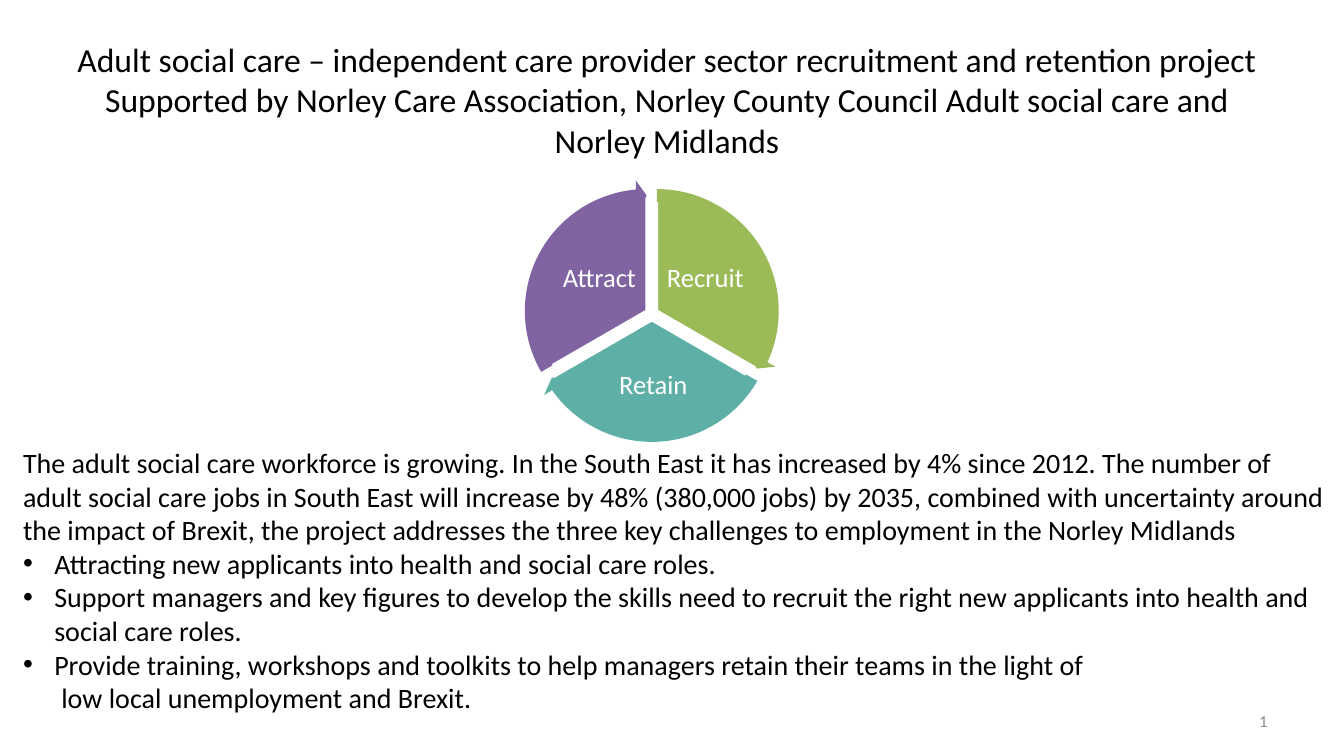
from dataclasses import dataclass

from lxml import etree
from pptx import Presentation
from pptx.dml.color import RGBColor
from pptx.enum.shapes import MSO_SHAPE as Shape
from pptx.enum.text import MSO_ANCHOR as Anchor, PP_ALIGN as Align
from pptx.oxml.ns import qn
from pptx.util import Inches, Pt


@dataclass(frozen=True)
class Theme:
    font: str = "Calibri"
    text: str = "000000"
    white: str = "FFFFFF"
    muted: str = "8C8C8C"
    green: str = "9BBB59"
    teal: str = "5EAFA6"
    purple: str = "8064A2"
    title: int = 24
    body: int = 20
    label: int = 19
    number: int = 12


THEME = Theme()

TITLE = [
    "Adult social care – independent care provider sector recruitment and retention project",
    "Supported by Norley Care Association, Norley County Council Adult social care and Norley Midlands",
]
INTRO = (
    "The adult social care workforce is growing. In the South East it has increased by 4% since 2012. "
    "The number of adult social care jobs in South East will increase by 48% (380,000 jobs) by 2035, "
    "combined with uncertainty around the impact of Brexit, the project addresses the three key "
    "challenges to employment in the Norley Midlands"
)
CHALLENGES = [
    "Attracting new applicants into health and social care roles.",
    "Support managers and key figures to develop the skills need to recruit the right new applicants "
    "into health and social care roles.",
    "Provide training, workshops and toolkits to help managers retain their teams in the light of",
]
CLOSING = "low local unemployment and Brexit."
PAGE_NUMBER = "1"

STAGES = [
    ("Recruit", THEME.green, (5.36, 1.93), (162, 18), (14.73, 161.99), (6.58, 2.42, 0.83, 0.69)),
    ("Retain", THEME.teal, (5.31, 2.02), (18, 90), (86.72, 18), (5.86, 3.52, 1.24, 0.61)),
    ("Attract", THEME.purple, (5.26, 1.93), (90, 162), (158.73, 90), (5.53, 2.42, 0.83, 0.69)),
]
PIE_SIZE = 2.31
ARROW_SIZE = 2.6
ARROW_BAND, ARROW_HEAD, ARROW_EDGE = 0.05, 3.28, 0.06
LABEL_INSET = 0.03
BULLET_INDENT = 0.31
CLOSING_INDENT = 0.38


def add_run(p, text, size, color):
    r = p.add_run()
    r.text = text
    r.font.name = THEME.font
    r.font.size = Pt(size)
    r.font.color.rgb = RGBColor.from_string(color)


def add_box(slide, box, anchor=Anchor.TOP, inset=None):
    tf = slide.shapes.add_textbox(*map(Inches, box)).text_frame
    tf.word_wrap = True
    tf.vertical_anchor = anchor
    if inset is not None:
        tf.margin_left = tf.margin_right = tf.margin_top = tf.margin_bottom = Inches(inset)
    return tf


def add_line(slide, box, text, size, color, align, inset=None):
    p = add_box(slide, box, Anchor.MIDDLE, inset).paragraphs[0]
    p.alignment = align
    add_run(p, text, size, color)
    return p


def indent(p, left, bullet=False):
    pPr = p._p.get_or_add_pPr()
    pPr.set("marL", str(Inches(left)))
    if bullet:
        pPr.set("indent", str(-Inches(left)))
        etree.SubElement(pPr, qn("a:buFont")).set("typeface", "Arial")
        etree.SubElement(pPr, qn("a:buChar")).set("char", "•")


def add_sector(slide, kind, corner, size, color, adjustments):
    sp = slide.shapes.add_shape(kind, *map(Inches, (*corner, size, size)))
    sp.shadow.inherit = False
    sp.fill.solid()
    sp.fill.fore_color.rgb = RGBColor.from_string(color)
    for i, value in enumerate(adjustments):
        sp.adjustments[i] = value
    return sp


def add_title(slide):
    p = add_box(slide, (0.59, 0.33, 12.05, 1.31), Anchor.MIDDLE).paragraphs[0]
    p.alignment = Align.CENTER
    for i, text in enumerate(TITLE):
        if i:
            p.add_line_break()
        add_run(p, text, THEME.title, THEME.text)


def add_body(slide):
    tf = add_box(slide, (0.13, 4.37, 13.12, 2.79))
    for i, text in enumerate([INTRO, *CHALLENGES, CLOSING]):
        p = tf.add_paragraph() if i else tf.paragraphs[0]
        if text in CHALLENGES:
            indent(p, BULLET_INDENT, bullet=True)
        elif text == CLOSING:
            indent(p, CLOSING_INDENT)
        add_run(p, text, THEME.body, THEME.text)


def add_cycle(slide):
    for name, color, corner, angles, _, label in STAGES:
        sp = add_sector(slide, Shape.PIE, corner, PIE_SIZE, color, angles)
        sp.line.color.rgb = RGBColor.from_string(THEME.white)
        sp.line.width = Pt(2)
        p = add_line(slide, label, name, THEME.label, THEME.white, Align.CENTER, LABEL_INSET)
        p.line_spacing = 0.9
    overhang = (ARROW_SIZE - PIE_SIZE) / 2
    for _, color, corner, _, angles, _ in STAGES:
        start = [c - overhang for c in corner]
        sp = add_sector(slide, Shape.CIRCULAR_ARROW, start, ARROW_SIZE, color,
                        (ARROW_BAND, ARROW_HEAD, *angles, ARROW_EDGE))
        sp.line.fill.background()


def main():
    prs = Presentation()
    prs.slide_width, prs.slide_height = Inches(13.33), Inches(7.5)
    slide = prs.slides.add_slide(prs.slide_layouts[6])
    add_title(slide)
    add_line(slide, (9.56, 6.95, 3.11, 0.4), PAGE_NUMBER, THEME.number, THEME.muted, Align.RIGHT)
    add_body(slide)
    add_cycle(slide)
    prs.save("out.pptx")


if __name__ == "__main__":
    main()
